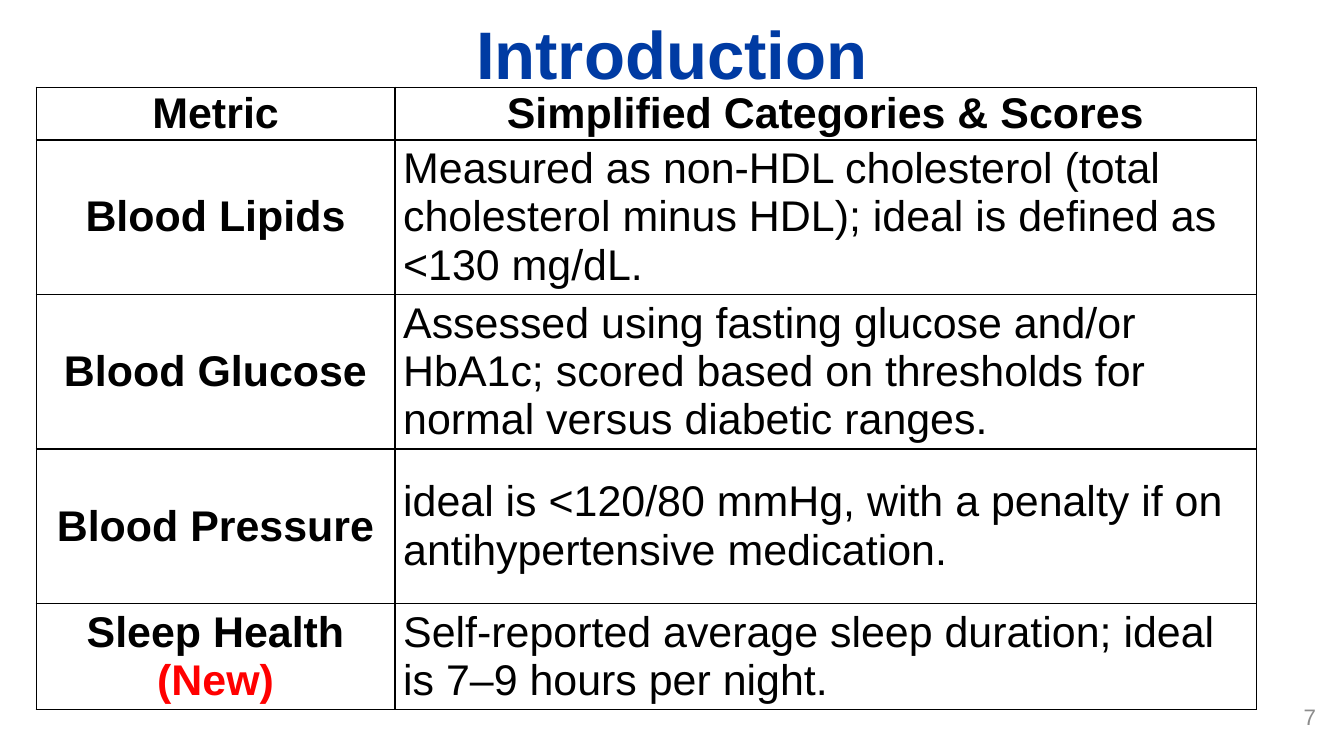
from dataclasses import dataclass

from lxml import etree
from pptx import Presentation
from pptx.dml.color import RGBColor
from pptx.enum.text import MSO_ANCHOR, MSO_AUTO_SIZE, PP_ALIGN
from pptx.oxml.ns import qn
from pptx.util import Inches, Pt

TOP, MIDDLE = MSO_ANCHOR.TOP, MSO_ANCHOR.MIDDLE
LEFT, CENTER, RIGHT = PP_ALIGN.LEFT, PP_ALIGN.CENTER, PP_ALIGN.RIGHT
NO_FIT = MSO_AUTO_SIZE.NONE

FONT = "Arial"
COLORS = {
    "paper": "FFFFFF",
    "title": "003BA3",
    "text": "000000",
    "new": "FF0000",
    "number": "8C8C8C",
}
COLUMN_WIDTHS = (2.67, 6.41)
HEADER_HEIGHT = 0.39


@dataclass
class Span:
    text: str
    size: float = 23
    color: str = "text"
    bold: bool = False


@dataclass
class Metric:
    name: list[Span]
    description: str
    height: float = 1.15


METRICS = [
    Metric([Span("Blood Lipids", bold=True)],
           "Measured as non-HDL cholesterol (total cholesterol minus HDL); "
           "ideal is defined as <130 mg/dL."),
    Metric([Span("Blood Glucose", bold=True)],
           "Assessed using fasting glucose and/or HbA1c; scored based on "
           "thresholds for normal versus diabetic ranges."),
    Metric([Span("Blood Pressure", bold=True)],
           "ideal is <120/80 mmHg, with a penalty if on "
           "antihypertensive medication."),
    Metric([Span("Sleep Health ", bold=True), Span("(New)", color="new", bold=True)],
           "Self-reported average sleep duration; ideal is 7–9 hours per night.",
           0.79),
]


def rgb(name: str) -> RGBColor:
    return RGBColor.from_string(COLORS[name])


def write(para, spans: list[Span], align) -> None:
    para.alignment = align
    for span in spans:
        run = para.add_run()
        run.text = span.text
        run.font.name = FONT
        run.font.size = Pt(span.size)
        run.font.bold = span.bold
        run.font.color.rgb = rgb(span.color)


def add_text(page, left: float, top: float, width: float, height: float,
             span: Span, align, anchor, inset_y: float):
    box = page.shapes.add_textbox(Inches(left), Inches(top), Inches(width), Inches(height))
    frame = box.text_frame
    frame.word_wrap = True
    frame.auto_size = NO_FIT
    frame.vertical_anchor = anchor
    frame.margin_left = frame.margin_right = Inches(0.1)
    frame.margin_top = frame.margin_bottom = Inches(inset_y)
    write(frame.paragraphs[0], [span], align)
    return box


def add_borders(cell) -> None:
    properties = cell._tc.get_or_add_tcPr()
    for position, side in enumerate(("a:lnL", "a:lnR", "a:lnT", "a:lnB")):
        line = etree.Element(qn(side), w=str(Pt(1)))
        fill = etree.SubElement(line, qn("a:solidFill"))
        etree.SubElement(fill, qn("a:srgbClr"), val=COLORS["text"])
        properties.insert(position, line)


def fill_cell(cell, spans: list[Span], align, inset_x: float, inset_y: float) -> None:
    cell.fill.background()
    cell.vertical_anchor = MIDDLE
    cell.margin_left = cell.margin_right = Inches(inset_x)
    cell.margin_top = cell.margin_bottom = Inches(inset_y)
    write(cell.text_frame.paragraphs[0], spans, align)
    add_borders(cell)


def add_metrics_table(page) -> None:
    heights = [HEADER_HEIGHT] + [metric.height for metric in METRICS]
    table = page.shapes.add_table(
        len(heights), len(COLUMN_WIDTHS), Inches(0.27), Inches(0.65),
        Inches(sum(COLUMN_WIDTHS)), Inches(sum(heights))).table
    for column, width in zip(table.columns, COLUMN_WIDTHS):
        column.width = Inches(width)
    for row, height in zip(table.rows, heights):
        row.height = Inches(height)

    # Header row
    for index, heading in enumerate(("Metric", "Simplified Categories & Scores")):
        fill_cell(table.cell(0, index), [Span(heading, bold=True)], CENTER, 0.03, 0.01)

    # One row per metric
    for index, metric in enumerate(METRICS, start=1):
        fill_cell(table.cell(index, 0), metric.name, CENTER, 0.03, 0.01)
        fill_cell(table.cell(index, 1), [Span(metric.description)], LEFT, 0.06, 0.03)


def main() -> None:
    deck = Presentation()
    # Widescreen, 16 to 9
    deck.slide_width = Inches(10)
    deck.slide_height = Inches(10 * 9 / 16)
    page = deck.slides.add_slide(deck.slide_layouts[6])

    # Title
    title = add_text(page, 0.5, -0.01, 9, 0.65,
                     Span("Introduction", 36, "title", True), CENTER, TOP, 0.1)
    title.fill.solid()
    title.fill.fore_color.rgb = rgb("paper")

    # Page number
    add_text(page, 6.89, 5.13, 3, 0.4, Span("7", 12, "number"), RIGHT, MIDDLE, 0.05)

    add_metrics_table(page)
    deck.save("out.pptx")


if __name__ == "__main__":
    main()
